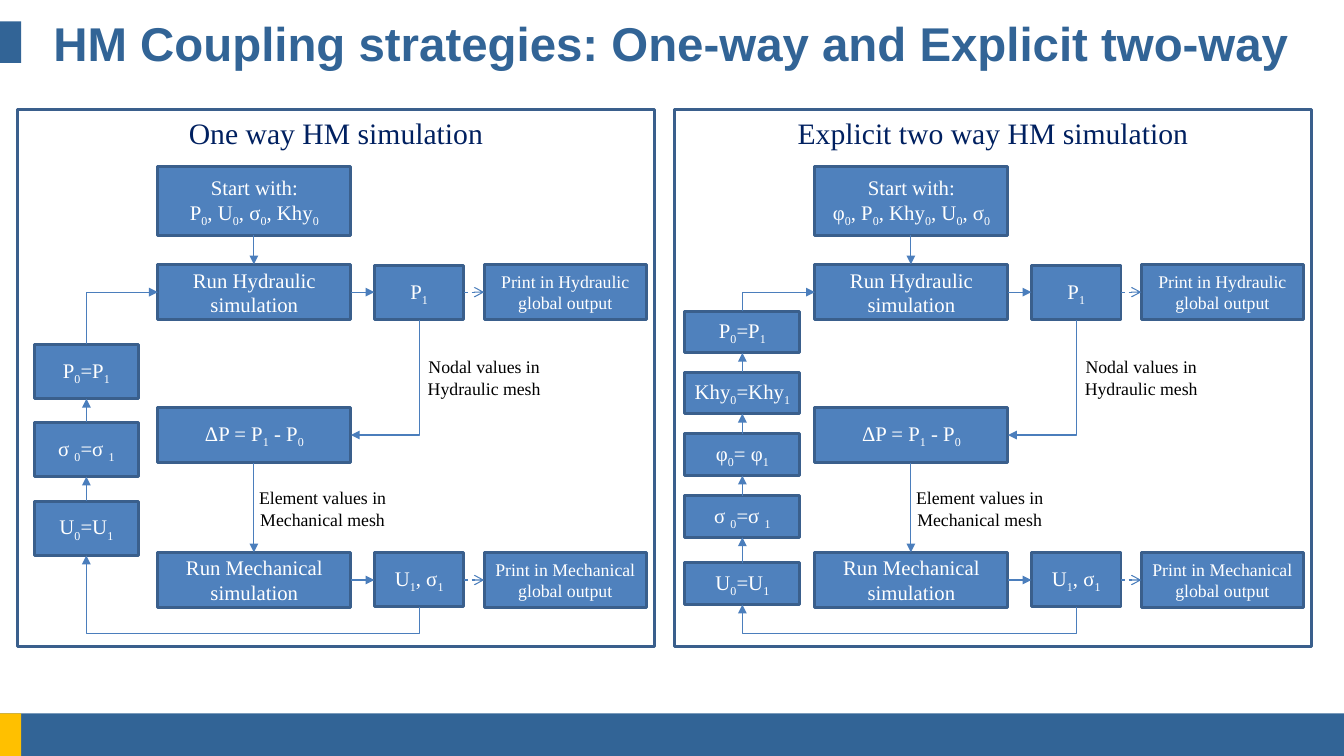
from dataclasses import dataclass
from typing import Optional

from lxml import etree
from pptx import Presentation
from pptx.dml.color import RGBColor
from pptx.enum.dml import MSO_LINE
from pptx.enum.shapes import MSO_CONNECTOR, MSO_SHAPE
from pptx.enum.text import MSO_ANCHOR, MSO_AUTO_SIZE, PP_ALIGN
from pptx.oxml.ns import qn
from pptx.util import Inches, Pt

RECT = MSO_SHAPE.RECTANGLE
STRAIGHT, ELBOW = MSO_CONNECTOR.STRAIGHT, MSO_CONNECTOR.ELBOW
CENTER, LEFT = PP_ALIGN.CENTER, PP_ALIGN.LEFT
TOP, MIDDLE = MSO_ANCHOR.TOP, MSO_ANCHOR.MIDDLE
NO_FIT, DASH = MSO_AUTO_SIZE.NONE, MSO_LINE.DASH

BRAND_BLUE = RGBColor(0x32, 0x64, 0x96)
AMBER = RGBColor(0xFF, 0xC0, 0x00)
BOX_BLUE = RGBColor(0x4F, 0x81, 0xBD)
EDGE_BLUE = RGBColor(0x3A, 0x5F, 0x8C)
ARROW_BLUE = RGBColor(0x4B, 0x7E, 0xBC)
NAVY = RGBColor(0x00, 0x20, 0x60)
WHITE = RGBColor(0xFF, 0xFF, 0xFF)
BLACK = RGBColor(0x00, 0x00, 0x00)
SERIF = "Times New Roman"

PANEL_STEP = 6.16
HYDRAULIC_Y, DELTA_Y, MECHANICAL_Y = 2.74, 4.08, 5.44
MAIN_X, RESULT_X = 2.38, 3.93
RETURN_Y = 5.94


@dataclass
class Box:
    """A rectangle in inches; "_" before a digit makes it a subscript."""
    text: str
    left: float
    top: float
    width: float
    height: float
    size: int = 14
    side_margin: float = 0.1


@dataclass
class Strategy:
    heading: str
    start_values: str
    updates: list[tuple[str, float]]
    update_left: float
    update_width: float
    update_height: float


FLOW_BOXES = [
    Box("Run Hydraulic simulation", 1.48, 2.48, 1.81, 0.52),
    Box("P_1", 3.51, 2.49, 0.84, 0.51),
    Box("Print in Hydraulic global output", 4.54, 2.48, 1.52, 0.52, 12),
    Box("ΔP = P_1 - P_0", 1.48, 3.82, 1.81, 0.52),
    Box("Run Mechanical simulation", 1.48, 5.18, 1.81, 0.52),
    Box("U_1, σ_1", 3.51, 5.18, 0.84, 0.51),
    Box("Print in Mechanical global output", 4.54, 5.18, 1.52, 0.52, 12),
]
MESH_NOTES = [
    Box("Nodal values in Hydraulic mesh", 3.59, 3.29, 1.9, 0.5, 12),
    Box("Element values in Mechanical mesh", 2.32, 4.52, 1.41, 0.5, 12),
]
STRATEGIES = [
    Strategy("One way HM simulation", "P_0, U_0, σ_0, Khy_0",
             [("P_0=P_1", 3.23), ("σ _0=σ _1", 3.96), ("U_0=U_1", 4.7)],
             0.32, 0.98, 0.51),
    Strategy("Explicit two way HM simulation", "φ_0, P_0, Khy_0, U_0, σ_0",
             [("P_0=P_1", 2.92), ("Khy_0=Khy_1", 3.49), ("φ_0= φ_1", 4.07),
              ("σ _0=σ _1", 4.65), ("U_0=U_1", 5.28)],
             0.26, 1.08, 0.39),
]


def write(frame, text: str, size: int, color: RGBColor) -> None:
    frame.word_wrap = True
    for number, line in enumerate(text.split("\n")):
        paragraph = frame.paragraphs[0] if number == 0 else frame.add_paragraph()
        paragraph.alignment = CENTER
        paragraph.font.name = SERIF
        paragraph.font.size = Pt(size)
        paragraph.font.color.rgb = color
        plain, *marked = line.split("_")
        if plain:
            paragraph.add_run().text = plain
        for part in marked:
            subscript = paragraph.add_run()
            subscript.text = part[0]
            subscript.font._element.set("baseline", "-25000")
            if part[1:]:
                paragraph.add_run().text = part[1:]


def add_rect(slide, left: float, top: float, width: float, height: float,
             fill: Optional[RGBColor], edge: Optional[RGBColor] = None):
    rect = slide.shapes.add_shape(RECT, Inches(left), Inches(top),
                                  Inches(width), Inches(height))
    rect.shadow.inherit = False
    if fill is None:
        rect.fill.background()
    else:
        rect.fill.solid()
        rect.fill.fore_color.rgb = fill
    if edge is None:
        rect.line.fill.background()
    else:
        rect.line.color.rgb = edge
        rect.line.width = Pt(2)
    return rect


def add_box(slide, box: Box, dx: float) -> None:
    rect = add_rect(slide, box.left + dx, box.top, box.width, box.height,
                    BOX_BLUE, EDGE_BLUE)
    frame = rect.text_frame
    frame.vertical_anchor = MIDDLE
    frame.margin_left = frame.margin_right = Inches(box.side_margin)
    write(frame, box.text, box.size, WHITE)


def add_arrow(slide, x0: float, y0: float, x1: float, y1: float,
              kind=STRAIGHT, dashed: bool = False):
    arrow = slide.shapes.add_connector(kind, Inches(x0), Inches(y0),
                                       Inches(x1), Inches(y1))
    arrow.line.color.rgb = ARROW_BLUE
    arrow.line.width = Pt(0.75)
    if dashed:
        arrow.line.dash_style = DASH
    etree.SubElement(arrow.line._get_or_add_ln(), qn("a:tailEnd"),
                     type="arrow" if dashed else "triangle")
    etree.SubElement(arrow._element.spPr, qn("a:effectLst"))
    return arrow


def add_elbow(slide, x0: float, y0: float, x1: float, y1: float,
              turn_y: Optional[float] = None) -> None:
    """Leave vertically; turn once, or twice when turn_y is given."""
    cx, cy = (x0 + x1) / 2, (y0 + y1) / 2
    half_w, half_h = (x1 - x0) / 2, (y1 - y0) / 2
    # The outline is laid out sideways, then turned by 90 degrees
    arrow = add_arrow(slide, cx - half_h, cy + half_w,
                      cx + half_h, cy - half_w, ELBOW)
    properties = arrow._element.spPr
    properties.find(qn("a:xfrm")).set("rot", "5400000")
    geometry = properties.find(qn("a:prstGeom"))
    if turn_y is None:
        geometry.set("prst", "bentConnector2")
    else:
        bend = round((turn_y - y0) / (y1 - y0) * 100000)
        etree.SubElement(geometry.find(qn("a:avLst")), qn("a:gd"),
                         name="adj1", fmla=f"val {bend}")


def add_strategy(slide, strategy: Strategy, dx: float) -> None:
    # Panel and its heading
    panel = add_rect(slide, 0.16 + dx, 1.03, 5.98, 5.03, None, EDGE_BLUE)
    panel.text_frame.vertical_anchor = TOP
    write(panel.text_frame, strategy.heading, 20, NAVY)

    # Main flow
    start = Box("Start with:\n" + strategy.start_values, 1.48, 1.56, 1.81, 0.65)
    for box in [start, *FLOW_BOXES]:
        add_box(slide, box, dx)
    add_arrow(slide, MAIN_X + dx, 2.2, MAIN_X + dx, 2.48)
    add_arrow(slide, MAIN_X + dx, 4.34, MAIN_X + dx, 5.18)
    for y in (HYDRAULIC_Y, MECHANICAL_Y):
        add_arrow(slide, 3.29 + dx, y, 3.51 + dx, y)
        add_arrow(slide, 4.35 + dx, y, 4.54 + dx, y, dashed=True)
    add_elbow(slide, RESULT_X + dx, 3, 3.29 + dx, DELTA_Y)

    # Update stack and the loop back to the hydraulic run
    left, width, height = (strategy.update_left, strategy.update_width,
                           strategy.update_height)
    stack_x = left + width / 2 + dx
    tops = [top for _, top in strategy.updates]
    for text, top in strategy.updates:
        add_box(slide, Box(text, left, top, width, height, side_margin=0), dx)
    for upper, lower in zip(tops, tops[1:]):
        add_arrow(slide, stack_x, lower, stack_x, upper + height)
    add_elbow(slide, stack_x, tops[0], 1.48 + dx, HYDRAULIC_Y)
    add_elbow(slide, RESULT_X + dx, 5.69, stack_x, tops[-1] + height, RETURN_Y)

    # Notes on the meshes
    for note in MESH_NOTES:
        label = slide.shapes.add_textbox(Inches(note.left + dx), Inches(note.top),
                                         Inches(note.width), Inches(note.height))
        write(label.text_frame, note.text, note.size, BLACK)


def main() -> None:
    prs = Presentation()
    prs.slide_width, prs.slide_height = Inches(12.6), Inches(7.09)
    slide = prs.slides.add_slide(prs.slide_layouts[5])

    # Coloured bars
    add_rect(slide, 0, 6.69, 12.6, 0.4, BRAND_BLUE)
    add_rect(slide, 0, 6.69, 0.2, 0.4, AMBER)
    add_rect(slide, 0, 0.2, 0.2, 0.39, BRAND_BLUE)

    # Title
    title = slide.shapes.title
    title.left, title.top = Inches(0.4), Inches(0.2)
    title.width, title.height = Inches(11.81), Inches(0.39)
    frame = title.text_frame
    frame.text = "HM Coupling strategies: One-way and Explicit two-way"
    frame.auto_size = NO_FIT
    frame.vertical_anchor = MIDDLE
    frame.margin_right = 0
    heading = frame.paragraphs[0]
    heading.alignment = LEFT
    heading.font.name = "Arial"
    heading.font.size = Pt(32)
    heading.font.bold = True
    heading.font.color.rgb = BRAND_BLUE

    # The two strategies side by side
    for number, strategy in enumerate(STRATEGIES):
        add_strategy(slide, strategy, number * PANEL_STEP)

    prs.save("out.pptx")


if __name__ == "__main__":
    main()
